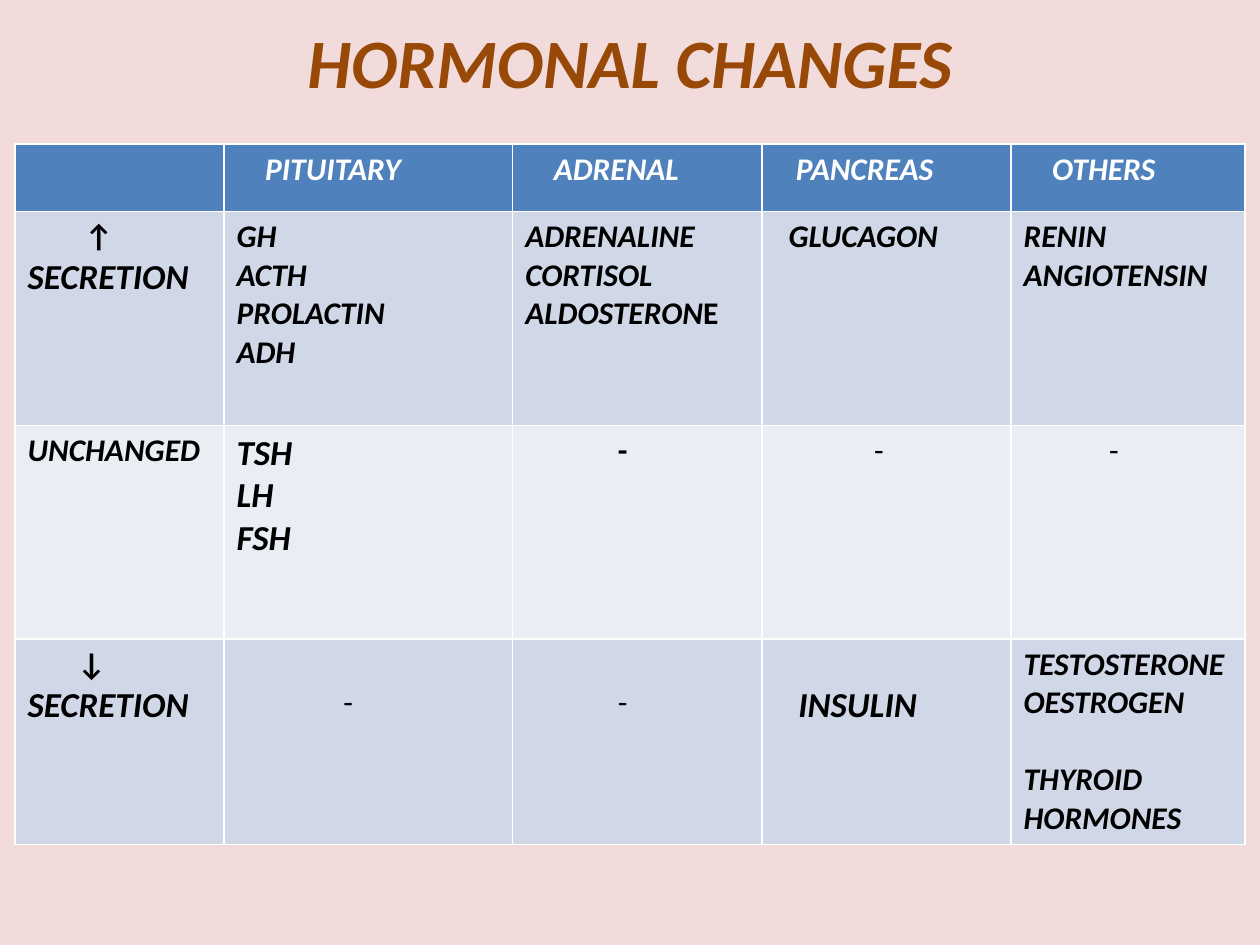
from dataclasses import dataclass

from pptx import Presentation
from pptx import util as u
from pptx.dml.color import RGBColor
from pptx.enum import text


@dataclass(frozen=True)
class Theme:
    font: str = "Calibri"
    background: str = "F2DCDB"
    title: str = "984807"
    header: str = "4F81BD"
    header_text: str = "FFFFFF"
    body_text: str = "000000"
    bands: tuple = ("D0D8E8", "E9EDF4")
    title_size: float = 39.6
    body_size: float = 18
    large_size: float = 20
    line: float = 22


@dataclass(frozen=True)
class Line:
    """One paragraph; spans hold (wording, font changes) where runs differ."""
    wording: str = ""
    indent: float = 0
    before: float = 0
    size: float = Theme.body_size
    bold: bool = True
    italic: bool = True
    spans: tuple = ()


class SlideBuilder:
    def __init__(self, page, theme):
        self.page = page
        self.theme = theme

    def background(self):
        fill = self.page.background.fill
        fill.solid()
        fill.fore_color.rgb = RGBColor.from_string(self.theme.background)

    def style(self, font, size, color, bold=True, italic=True):
        font.name = self.theme.font
        font.size = u.Pt(size)
        font.bold = bold
        font.italic = italic
        font.color.rgb = RGBColor.from_string(color)

    def title(self, wording, left, top, width, height):
        box = self.page.shapes.title
        box.left, box.top = u.Pt(left), u.Pt(top)
        box.width, box.height = u.Pt(width), u.Pt(height)
        frame = box.text_frame
        frame.vertical_anchor = text.MSO_ANCHOR.MIDDLE
        para = frame.paragraphs[0]
        para.text = wording
        para.alignment = text.PP_ALIGN.CENTER
        self.style(para.font, self.theme.title_size, self.theme.title)

    def paragraph(self, para, line, color):
        self.style(para.font, line.size, color, line.bold, line.italic)
        if line.before:
            para.space_before = u.Pt(line.before)
        if line.indent:
            properties = para._p.get_or_add_pPr()
            properties.set("marL", "0")
            properties.set("indent", str(u.Pt(line.indent)))
        for wording, changes in line.spans or ((line.wording, {}),):
            span = para.add_run()
            span.text = wording
            if "size" in changes:
                span.font.size = u.Pt(changes["size"])
            if "italic" in changes:
                span.font.italic = changes["italic"]

    def cell(self, cell, lines, fill, color, skip=0):
        cell.fill.solid()
        cell.fill.fore_color.rgb = RGBColor.from_string(fill)
        cell.margin_top = u.Pt(3.6 + skip)
        frame = cell.text_frame
        for number, line in enumerate(lines):
            para = frame.add_paragraph() if number else frame.paragraphs[0]
            self.paragraph(para, line, color)

    def table(self, rows, left, top, widths, heights, skips):
        theme = self.theme
        table = self.page.shapes.add_table(
            len(rows), len(widths), u.Pt(left), u.Pt(top),
            u.Pt(sum(widths)), u.Pt(sum(heights))).table
        for column, width in zip(table.columns, widths):
            column.width = u.Pt(width)
        for r, (row, height) in enumerate(zip(rows, heights)):
            table.rows[r].height = u.Pt(height)
            fill = theme.bands[(r - 1) % 2] if r else theme.header
            color = theme.body_text if r else theme.header_text
            for c, lines in enumerate(row):
                self.cell(table.cell(r, c), lines, fill, color,
                          skips.get((r, c), 0))


def stack(*words, size=Theme.body_size):
    return [Line(word, size=size) for word in words]


def dash(indent, bold=False):
    return [Line("-", indent, bold=bold, italic=False)]


def secretion(arrow, indent):
    return [Line(indent=indent, spans=(
        (arrow + " ", {"italic": False}),
        ("SECRETION", {"size": Theme.large_size})))]


def main():
    theme = Theme()
    deck = Presentation()
    deck.slide_width, deck.slide_height = u.Pt(720), u.Pt(540)
    slide = SlideBuilder(deck.slides.add_slide(deck.slide_layouts[5]), theme)

    # Background and title
    slide.background()
    slide.title("HORMONAL CHANGES", 36, 9.4, 648, 51)

    # Glands across, direction of change down
    header = [[], [Line("PITUITARY", 16.3)], [Line("ADRENAL", 16.3)],
              [Line("PANCREAS", 12.2)], [Line("OTHERS", 16.3)]]
    increased = [
        secretion("↑", 32.5),
        stack("GH", "ACTH", "PROLACTIN", "ADH"),
        stack("ADRENALINE", "CORTISOL") + [Line(spans=(
            ("ALDOSTERON", {}), ("E", {"italic": False})))],
        [Line("GLUCAGON", 8.1)],
        stack("RENIN", "ANGIOTENSIN")]
    unchanged = [
        stack("UNCHANGED"),
        stack("TSH", "LH", "FSH", size=theme.large_size),
        dash(52.9, bold=True), dash(57), dash(48.8)]
    decreased = [
        secretion("↓", 28.5),
        dash(61), dash(52.9),
        [Line("INSULIN", 13.6, size=theme.large_size)],
        stack("TESTOSTERONE", "OESTROGEN")
        + [Line("THYROID HORMONES", before=theme.line)]]

    # Middle cells of the last row start one line lower
    skips = {(3, column): theme.line for column in (1, 2, 3)}
    slide.table([header, increased, unchanged, decreased], 8.6, 82.3,
                widths=[119.4, 165, 142.4, 142.4, 133.8],
                heights=[38.6, 122.2, 122.2, 117.4], skips=skips)

    deck.save("out.pptx")


if __name__ == "__main__":
    main()
